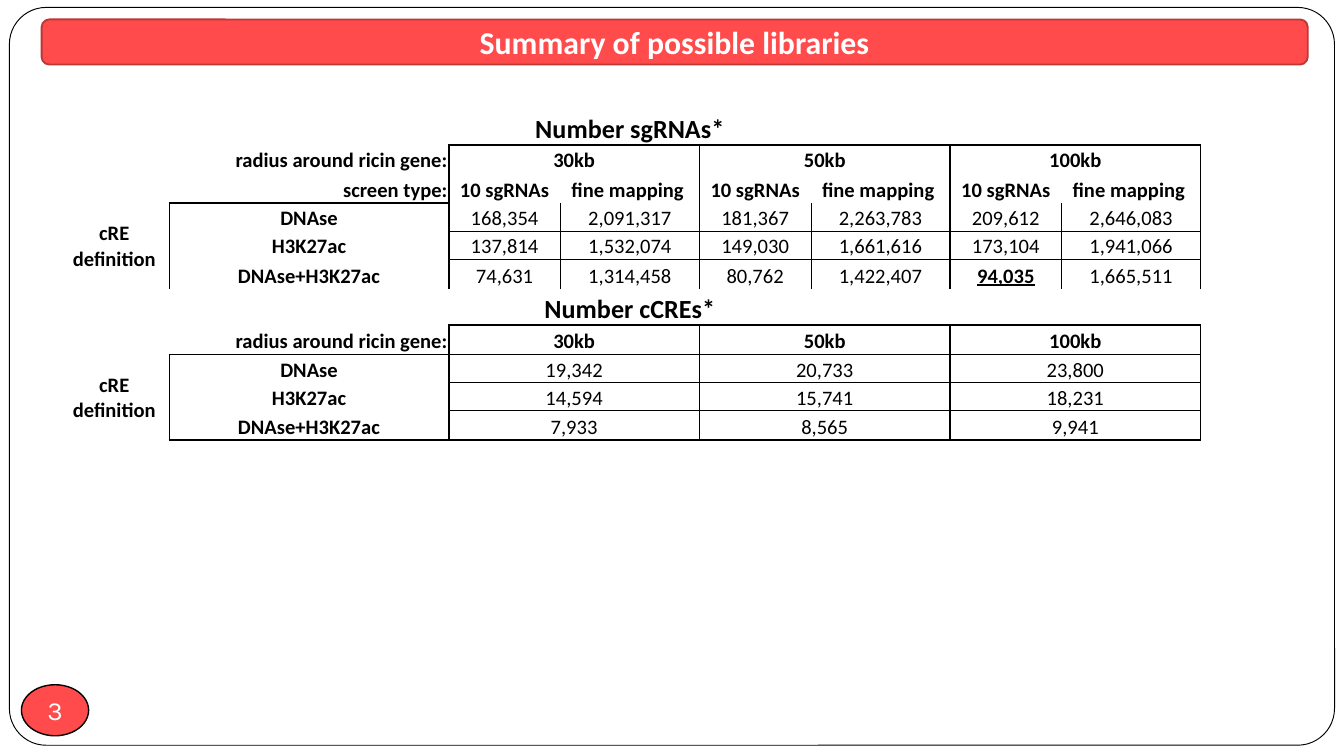
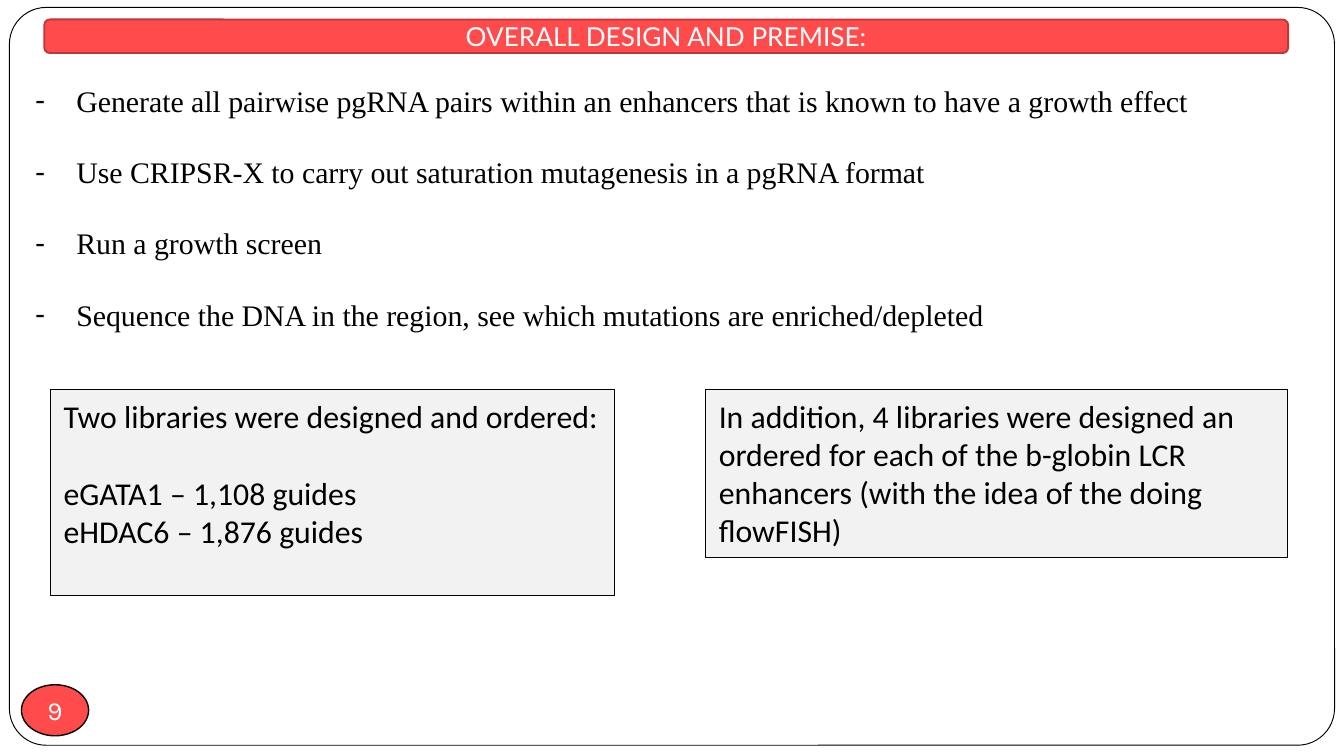
import dataclasses

import pptx
import pptx.dml.color
import pptx.enum.shapes
import pptx.enum.text
import pptx.oxml.ns
import pptx.util
from lxml import etree

PX = 4572  # 200 px to the inch
KIND = pptx.enum.shapes.MSO_SHAPE
ALIGN = pptx.enum.text.PP_ALIGN
ANCHOR = pptx.enum.text.MSO_ANCHOR
qn = pptx.oxml.ns.qn


@dataclasses.dataclass(frozen=True)
class Theme:
    red: str = "FF4B4B"
    rim: str = "BD3737"
    black: str = "000000"
    white: str = "FFFFFF"
    gray: str = "F2F2F2"
    sans: str = "Calibri"
    light: str = "Lato"
    serif: str = "Times New Roman"
    badge: str = "Karla"
    big: int = 17
    list: int = 16
    head: int = 14
    small: int = 11


T = Theme()
rgb = pptx.dml.color.RGBColor.from_string


def write(frame, text, size=T.small, font=T.sans, color=T.black, bold=False,
          under=False, align=ALIGN.LEFT, anchor=ANCHOR.TOP, wrap=True,
          gaps=None, inset=None, bullet=None):
    """Fill a text frame, one paragraph a line; gaps maps line to points before."""
    frame.word_wrap = wrap
    frame.vertical_anchor = anchor
    if inset is not None:
        frame.margin_left = frame.margin_right = inset * PX
        frame.margin_top = frame.margin_bottom = inset * PX
    for i, line in enumerate(text.split("\n")):
        para = frame.paragraphs[0] if i == 0 else frame.add_paragraph()
        para.alignment = align
        para.space_before = pptx.util.Pt((gaps or {}).get(i, 0))
        run = para.add_run()
        run.text = line
        run.font.name = font
        run.font.size = pptx.util.Pt(size)
        run.font.color.rgb = rgb(color)
        run.font.bold = bold
        run.font.underline = under
        if bullet:
            props = para._p.get_or_add_pPr()
            props.set("marL", str(62 * PX))
            props.set("indent", str(-62 * PX))
            etree.SubElement(props, qn("a:buFont"), typeface=T.light)
            etree.SubElement(props, qn("a:buChar"), char=bullet)


def draw(slide, kind, box, fill, line, width):
    """Add a flat preset shape."""
    shape = slide.shapes.add_shape(kind, *[n * PX for n in box])
    shape.shadow.inherit = False
    shape.fill.solid()
    shape.fill.fore_color.rgb = rgb(fill)
    shape.line.color.rgb = rgb(line)
    shape.line.width = pptx.util.Pt(width)
    return shape


deck = pptx.Presentation()
deck.slide_width = 2000 * PX
deck.slide_height = 1125 * PX

# Shared frame, page badge and title band
pages = [
    ("3", "Summary of possible libraries", (62, 29, 1884, 67),
     dict(size=T.big, font=T.sans, bold=True)),
    ("9", "OVERALL DESIGN AND PREMISE:", (66, 29, 1851, 50),
     dict(size=T.head, font=T.light)),
]
slides = []
for number, title, band, style in pages:
    slide = deck.slides.add_slide(deck.slide_layouts[6])
    slides.append(slide)
    frame = draw(slide, KIND.ROUNDED_RECTANGLE, (14, 11, 1972, 1098),
                 T.white, T.black, 0.5)
    frame.adjustments[0] = 0.05
    badge = draw(slide, KIND.OVAL, (32, 1019, 100, 76), T.red, T.black, 0.75)
    write(badge.text_frame, number, size=T.head, font=T.badge, color=T.white,
          align=ALIGN.CENTER, anchor=ANCHOR.MIDDLE, wrap=False, inset=0)
    bar = draw(slide, KIND.ROUNDED_RECTANGLE, band, T.red, T.rim, 1)
    write(bar.text_frame, title, color=T.white, align=ALIGN.CENTER,
          anchor=ANCHOR.MIDDLE, **style)

# Slide 1: library table
wide = [164, 416] + [166, 207] * 3
high = [54, 42, 44, 42, 42, 44, 54, 44, 42, 42, 43]
holder = slides[0].shapes.add_table(
    len(high), len(wide), 88 * PX, 162 * PX, sum(wide) * PX, sum(high) * PX)
for style in holder.element.iter(qn("a:tableStyleId")):
    style.text = "{2D5ABB26-0587-4C30-8999-92F81FD0307C}"
table = holder.table
table.first_row = table.horz_banding = False
for col, width in zip(table.columns, wide):
    col.width = width * PX
for row, height in zip(table.rows, high):
    row.height = height * PX

# Each item: row, column, rows down, columns across, text, borders, format
items = []
bold = dict(bold=True)
right = dict(bold=True, align=ALIGN.RIGHT)
blocks = [
    (0, 3, 1, "Number sgRNAs*", [
        "168,354 2,091,317 181,367 2,263,783 209,612 2,646,083",
        "137,814 1,532,074 149,030 1,661,616 173,104 1,941,066",
        "74,631 1,314,458 80,762 1,422,407 94,035 1,665,511"]),
    (6, 8, 2, "Number cCREs*", [
        "19,342 20,733 23,800",
        "14,594 15,741 18,231",
        "7,933 8,565 9,941"]),
]
for top, body, span, title, lines in blocks:
    plain = span == 2
    items.append((top, 0, 1, 8, title, {}, dict(bold=True, size=T.head)))
    base = {"B": 1} if plain else {}
    items.append((top + 1, 1, 1, 1, "radius around ricin gene:",
                  {"R": 1, **base}, right))
    for i, radius in enumerate(["30kb", "50kb", "100kb"]):
        items.append((top + 1, 2 + 2 * i, 1, 2, radius,
                      {"L": 1, "T": 1, "R": 1, **base}, bold))
    items.append((body, 0, 3, 1, "cRE definition", {"R": 1},
                  dict(bold=True, anchor=ANCHOR.MIDDLE)))
    for k, name in enumerate(["DNAse", "H3K27ac", "DNAse+H3K27ac"]):
        edge = {"L": 1, "R": 1}
        if k == 0:
            edge["T"] = 1
        if k == 2:
            edge.update(base)
        items.append((body + k, 1, 1, 1, name, edge, bold))
        for i, value in enumerate(lines[k].split()):
            edge = {"L": 1 if plain or i % 2 == 0 else 0.5,
                    "R": 1 if plain or i % 2 else 0.5}
            edge.update(base if k == 2 else {"B": 0.5})
            if k or plain:
                edge["T"] = 0.5 if k else 1
            pick = value == "94,035"
            items.append((body + k, 2 + span * i, 1, span, value, edge,
                          dict(bold=pick, under=pick)))

# Screen type row
items.append((2, 1, 1, 1, "screen type:", {"R": 1, "B": 1}, right))
for i in range(3):
    items.append((2, 2 + 2 * i, 1, 1, "10 sgRNAs", {"L": 1}, bold))
    items.append((2, 3 + 2 * i, 1, 1, "fine mapping ", {"R": 1}, bold))

edges = {}
for r, c, down, across, text, edge, style in items:
    cell = table.cell(r, c)
    if down * across > 1:
        cell.merge(table.cell(r + down - 1, c + across - 1))
    look = {"align": ALIGN.CENTER, "anchor": ANCHOR.BOTTOM, **style}
    cell.vertical_anchor = look.pop("anchor")
    write(cell.text_frame, text, **look)
    edges[r, c] = edge
    for n in range(1, across):
        edges[r, c + n] = {s: w for s, w in edge.items() if s != "L"}

# Cell margins, borders and fills
for r in range(len(high)):
    for c in range(len(wide)):
        cell = table.cell(r, c)
        cell.margin_left = cell.margin_right = cell.margin_top = 2 * PX
        cell.margin_bottom = 0
        if not cell.text:
            etree.SubElement(cell.text_frame.paragraphs[0]._p,
                             qn("a:endParaRPr"), sz=str(T.small * 100))
        props = cell._tc.get_or_add_tcPr()
        for side in "LRTB":
            width = edges.get((r, c), {}).get(side, 0)
            line = etree.SubElement(props, qn("a:ln" + side),
                                    w=str(pptx.util.Pt(width)))
            if width:
                fill = etree.SubElement(line, qn("a:solidFill"))
                etree.SubElement(fill, qn("a:srgbClr"), val=T.black)
            else:
                etree.SubElement(line, qn("a:noFill"))
        cell.fill.background()

# Slide 2: plan
plan = slides[1].shapes.add_textbox(32 * PX, 113 * PX, 1918 * PX, 398 * PX)
write(plan.text_frame,
      "Generate all pairwise pgRNA pairs within an enhancers that is known "
      "to have a growth effect\n"
      "Use CRIPSR-X to carry out saturation mutagenesis in a pgRNA format\n"
      "Run a growth screen\n"
      "Sequence the DNA in the region, see which mutations are "
      "enriched/depleted",
      size=T.list, font=T.serif, bullet="-", gaps={1: 19, 2: 19, 3: 19})

# Slide 2: library notes
notes = [
    ((75, 580, 840, 306), False, {1: 21},
     "Two libraries were designed and ordered:\n"
     "eGATA1 – 1,108 guides\neHDAC6 – 1,876 guides"),
    ((1050, 580, 866, 250), True, {},
     "In addition, 4 libraries were designed an ordered for each of the "
     "b-globin LCR enhancers (with the idea of the doing flowFISH)"),
]
for box, wrap, gaps, text in notes:
    note = draw(slides[1], KIND.RECTANGLE, box, T.gray, T.black, 0.75)
    write(note.text_frame, text, size=T.big, wrap=wrap, gaps=gaps)

deck.save("out.pptx")
